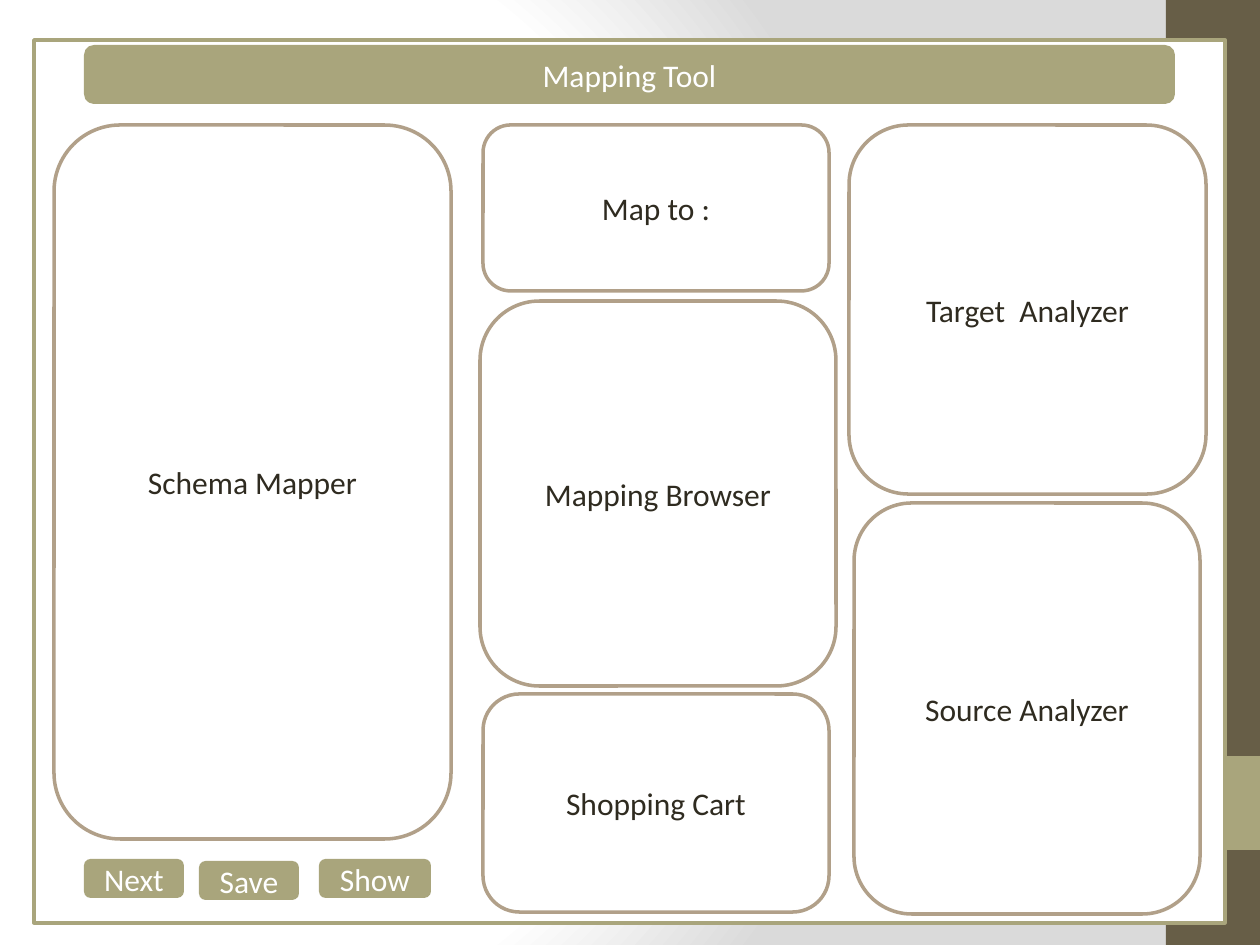
from dataclasses import dataclass

from pptx import Presentation
from pptx.dml.color import RGBColor
from pptx.enum.shapes import MSO_SHAPE
from pptx.enum.text import MSO_ANCHOR, PP_ALIGN
from pptx.oxml import parse_xml
from pptx.util import Emu, Pt

RECT, ROUNDED = MSO_SHAPE.RECTANGLE, MSO_SHAPE.ROUNDED_RECTANGLE
MIDDLE, CENTER = MSO_ANCHOR.MIDDLE, PP_ALIGN.CENTER
PX_PER_INCH = 126
SLIDE_W, SLIDE_H = 1260, 945
DRAWING_NS = "http://schemas.openxmlformats.org/drawingml/2006/main"


@dataclass(frozen=True)
class Theme:
    """Colours, font and sizes shared by the whole slide."""
    white: str = "FFFFFF"
    shade: str = "DADADA"
    olive: str = "A9A57C"
    brown: str = "675E47"
    outline: str = "B1A089"
    ink: str = "2F2B20"
    font: str = "Calibri"
    text_size: int = 18
    line_width: int = 2


THEME = Theme()


def px(length):
    """Turn pixels into EMU."""
    return Emu(round(length * 914400 / PX_PER_INCH))


def inside(box, left, top, width, height):
    """Return a box placed relative to the corner of another box."""
    return box[0] + left, box[1] + top, width, height


def write(holder, label, color):
    """Write one centred label into a shape or placeholder."""
    frame = holder.text_frame
    frame.text = label
    frame.word_wrap = True
    frame.vertical_anchor = MIDDLE
    line = frame.paragraphs[0]
    line.alignment = CENTER
    font = line.runs[0].font
    font.name, font.size = THEME.font, Pt(THEME.text_size)
    font.color.rgb = RGBColor.from_string(color)


def add_block(slide, kind, box, fill, outline=None):
    """Add a flat filled block with an optional outline."""
    block = slide.shapes.add_shape(kind, *map(px, box))
    block.shadow.inherit = False
    block.fill.solid()
    block.fill.fore_color.rgb = RGBColor.from_string(fill)
    if outline:
        block.line.color.rgb = RGBColor.from_string(outline)
        block.line.width = Pt(THEME.line_width)
    else:
        block.line.fill.background()
    return block


def paint_background(slide):
    """Give the slide a circular gradient from white to grey."""
    fill = slide.background.fill
    fill.solid()
    stops = "".join(
        f'<a:gs pos="{percent * 1000}"><a:srgbClr val="{color}"/></a:gs>'
        for percent, color in ((0, THEME.white), (75, THEME.white), (100, THEME.shade)))
    gradient = parse_xml(
        f'<a:gradFill xmlns:a="{DRAWING_NS}" rotWithShape="1"><a:gsLst>{stops}</a:gsLst>'
        '<a:path path="circle"><a:fillToRect l="20000" t="50000" r="100000" b="50000"/>'
        '</a:path></a:gradFill>')
    properties = slide.background._cSld.bg.bgPr
    properties.replace(properties[0], gradient)


def add_sidebar(slide, box):
    """Draw the brown side band with its olive square."""
    add_block(slide, RECT, box, THEME.brown)
    add_block(slide, RECT, inside(box, 0, 756, box[2], box[2]), THEME.olive)


def add_header(slide, box):
    """Draw the header bar and set the slide title on it."""
    add_block(slide, ROUNDED, box, THEME.olive)
    title = slide.shapes.title
    title.left, title.top, title.width, title.height = map(px, box)
    write(title, "Mapping Tool", THEME.white)
    title.element.getparent().append(title.element)


def add_panels(slide, box):
    """Draw the outlined panels in three columns."""
    panels = (
        ("Schema Mapper", 0, 0, 397, 714),
        ("Map to :", 429, 0, 346, 166),
        ("Target  Analyzer", 795, 0, 357, 369),
        ("Source Analyzer", 800, 378, 346, 411),
        ("Mapping Browser", 426, 176, 356, 385),
        ("Shopping Cart", 429, 569, 346, 218),
    )
    for label, *place in panels:
        panel = add_block(slide, ROUNDED, inside(box, *place), THEME.white, THEME.outline)
        write(panel, label, THEME.ink)


def add_buttons(slide, box):
    """Draw the row of action buttons."""
    for label, left, top, width in (("Next", 0, 0, 100), ("Save", 115, 2, 100), ("Show", 235, 0, 112)):
        button = add_block(slide, ROUNDED, inside(box, left, top, width, box[3]), THEME.olive)
        write(button, label, THEME.white)


def add_tool_window(slide, box):
    """Draw the window frame with its header, panels and buttons."""
    add_block(slide, RECT, box, THEME.white, THEME.olive)
    add_header(slide, inside(box, 50, 5, 1091, 59))
    add_panels(slide, inside(box, 20, 85, 1152, 789))
    add_buttons(slide, inside(box, 50, 819, 347, 39))


def main():
    """Build and save the presentation."""
    deck = Presentation()
    deck.slide_width, deck.slide_height = px(SLIDE_W), px(SLIDE_H)
    slide = deck.slides.add_slide(deck.slide_layouts.get_by_name("Title Only"))
    paint_background(slide)
    add_sidebar(slide, (1166, 0, 94, SLIDE_H))
    add_tool_window(slide, (34, 40, 1191, 883))
    deck.save("out.pptx")


if __name__ == "__main__":
    main()
